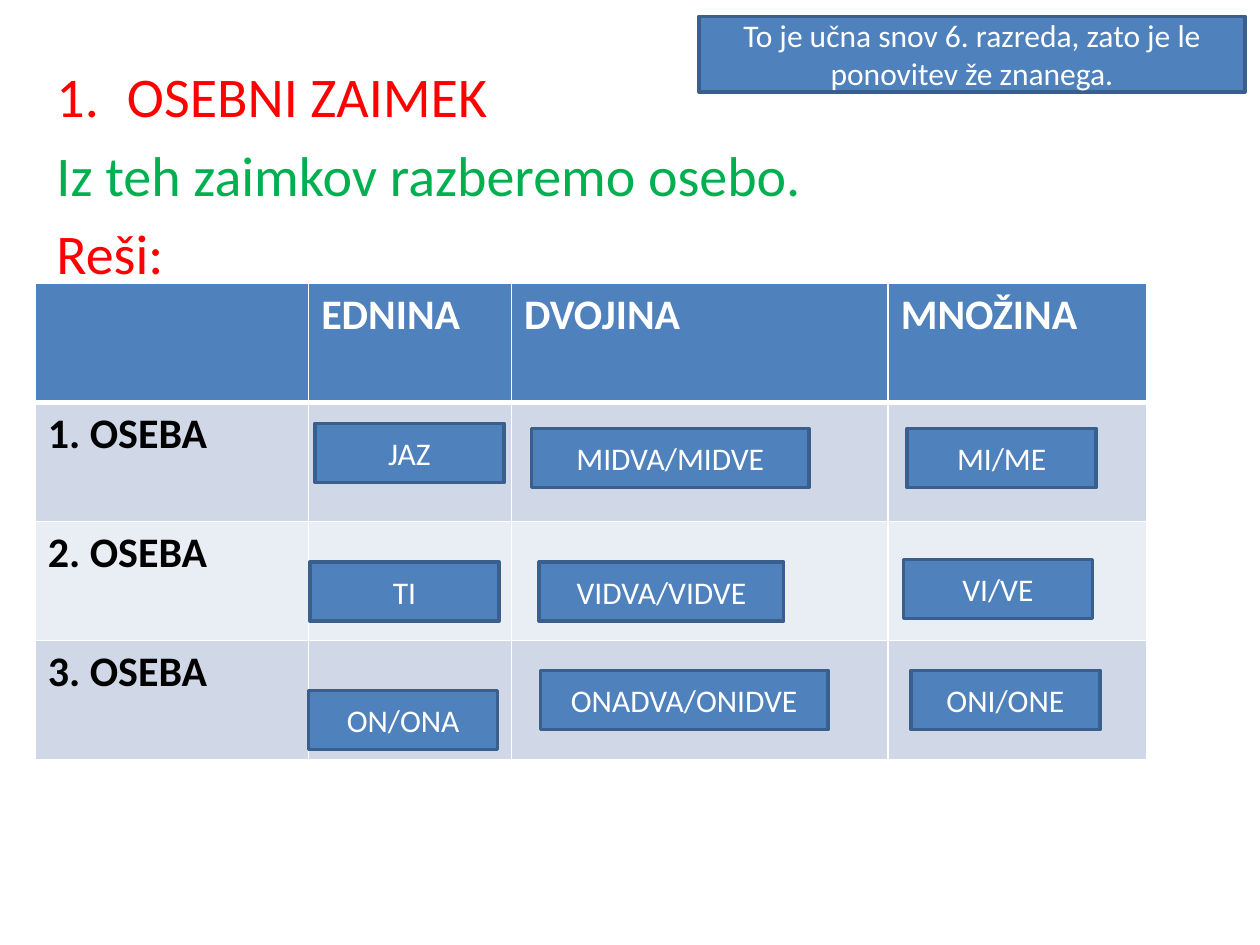
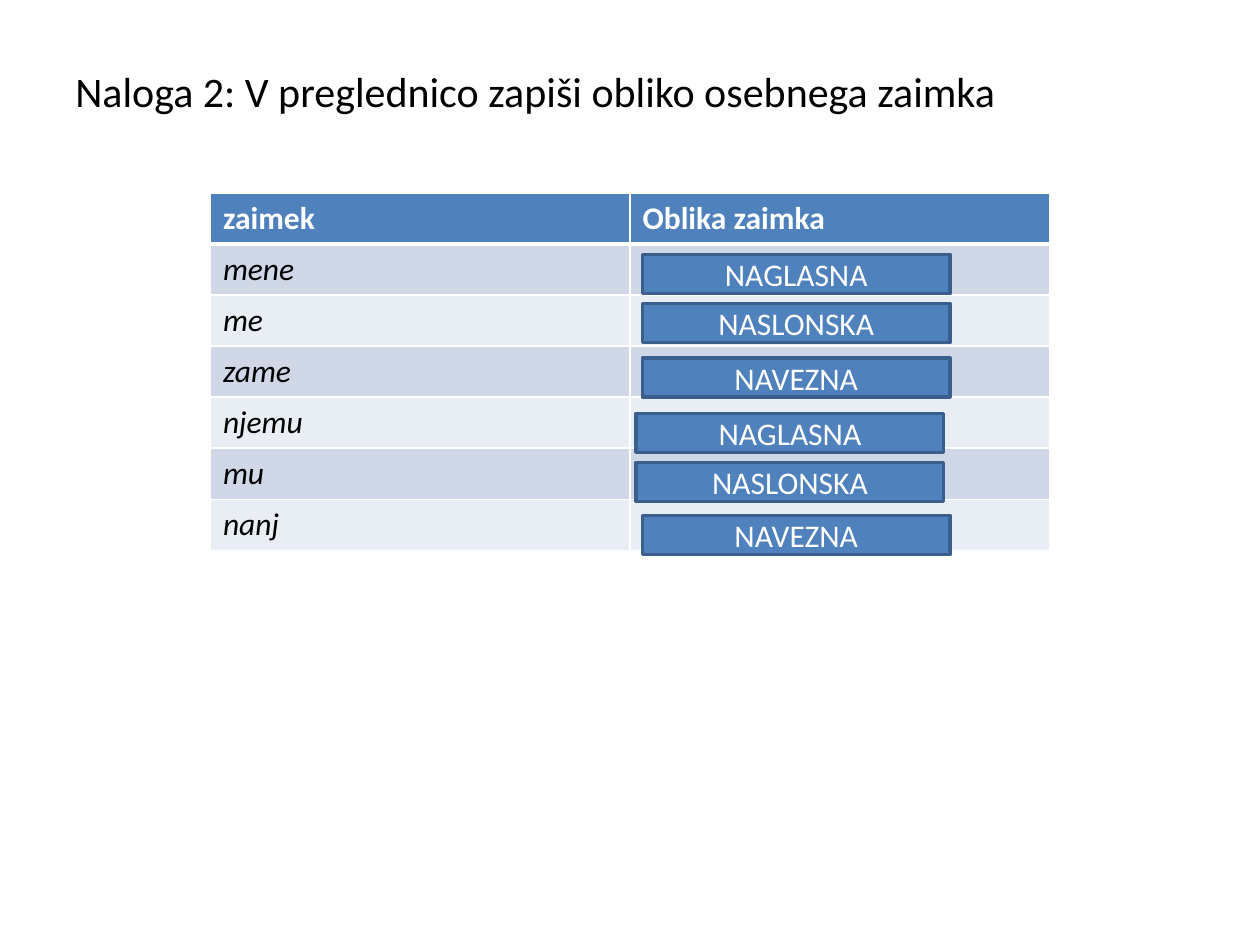
"""Build two slides on personal pronouns with answer boxes over tables."""
from lxml.etree import SubElement
from pptx import Presentation
from pptx.dml.color import RGBColor as RGB
from pptx.enum.shapes import MSO_SHAPE as SHAPE
from pptx.enum.text import MSO_ANCHOR as ANCHOR, PP_ALIGN as ALIGN
from pptx.oxml.ns import qn
from pptx.util import Inches, Pt

COLORS = {
    "blue": "4F81BD", "edge": "3A5F8C", "band1": "D0D8E8", "band2": "E9EDF4",
    "white": "FFFFFF", "black": "000000", "red": "FF0000", "green": "00B050",
}


def rgb(name):
    return RGB.from_string(COLORS[name])


class Deck:
    def __init__(self):
        self.prs = Presentation()
        self.prs.slide_width, self.prs.slide_height = Inches(10), Inches(7.5)
        self.font = "Calibri"
        self.s = None

    def slide(self):
        self.s = self.prs.slides.add_slide(self.prs.slide_layouts[6])

    def run(self, p, text, color, **fmt):
        r = p.add_run()
        r.text = text
        for key, value in {"name": self.font, **fmt}.items():
            setattr(r.font, key, value)
        r.font.color.rgb = rgb(color)

    def body(self, at, size, lines):
        tf = self.s.shapes.add_textbox(*map(Inches, at)).text_frame
        tf.word_wrap = True
        for i, (text, color, hanging, number) in enumerate(lines):
            p = tf.add_paragraph() if i else tf.paragraphs[0]
            pPr = p._p.get_or_add_pPr()
            if hanging:
                pPr.set("marL", str(Inches(hanging)))
                pPr.set("indent", str(-Inches(hanging)))
            before = SubElement(pPr, qn("a:spcBef"))
            SubElement(before, qn("a:spcPct"), val="20000")
            if number:
                SubElement(pPr, qn("a:buFont"), typeface="+mj-lt")
                SubElement(pPr, qn("a:buAutoNum"), type=number)
            self.run(p, text, color, size=Pt(size))

    def borders(self, cell, row):
        tcPr = cell._tc.get_or_add_tcPr()
        widths = {"L": 1, "R": 1, "T": 1, "B": 1 if row else 3}
        if row == 1:
            widths["T"] = 3
        for side, width in widths.items():
            ln = SubElement(tcPr, qn(f"a:ln{side}"), w=str(Pt(width)))
            fill = SubElement(ln, qn("a:solidFill"))
            SubElement(fill, qn("a:srgbClr"), val=COLORS["white"])

    def table(self, at, size, header, labels, widths, **label_fmt):
        rows = [header] + [[label] + [""] * (len(header) - 1) for label in labels]
        frame = self.s.shapes.add_table(len(rows), len(header), *map(Inches, at))
        table = frame.table
        table.first_row = table.horz_banding = False
        for col, width in zip(table.columns, widths):
            col.width = Inches(width)
        for i, row in enumerate(rows):
            fill = ("band1" if i % 2 else "band2") if i else "blue"
            fmt = label_fmt if i else {"bold": True}
            for j, text in enumerate(row):
                cell = table.cell(i, j)
                self.borders(cell, i)
                cell.fill.solid()
                cell.fill.fore_color.rgb = rgb(fill)
                if text:
                    self.run(cell.text_frame.paragraphs[0], text,
                             "black" if i else "white", size=Pt(size), **fmt)

    def box(self, at, text):
        sp = self.s.shapes.add_shape(SHAPE.RECTANGLE, *map(Inches, at))
        sp.shadow.inherit = False
        sp.fill.solid()
        sp.fill.fore_color.rgb = rgb("blue")
        sp.line.color.rgb = rgb("edge")
        sp.line.width = Pt(2)
        tf = sp.text_frame
        tf.word_wrap = True
        tf.vertical_anchor = ANCHOR.MIDDLE
        p = tf.paragraphs[0]
        p.alignment = ALIGN.CENTER
        self.run(p, text, "white", size=Pt(18))


def persons(deck):
    deck.slide()
    deck.body((0.35, 0.44, 9, 4.95), 32, [
        ("OSEBNI ZAIMEK", "red", 0.56, "arabicPeriod"),
        ("Iz teh zaimkov razberemo osebo.", "green", 0, None),
        ("Reši:", "red", 0.56, None),
    ])
    deck.table((0.28, 2.25, 8.82, 3.78), 24, ["", "EDNINA", "DVOJINA", "MNOŽINA"],
               [f"{n}. OSEBA" for n in (1, 2, 3)], (2.17, 1.61, 2.99, 2.05), bold=True)
    for x, y, w, text in (
        (2.5, 3.36, 1.5, "JAZ"),
        (2.46, 4.46, 1.5, "TI"),
        (2.45, 5.48, 1.5, "ON/ONA"),
        (4.22, 3.4, 2.2, "MIDVA/MIDVE"),
        (4.28, 4.46, 1.94, "VIDVA/VIDVE"),
        (4.29, 5.32, 2.28, "ONADVA/ONIDVE"),
        (7.2, 3.4, 1.5, "MI/ME"),
        (7.17, 4.44, 1.5, "VI/VE"),
        (7.23, 5.32, 1.5, "ONI/ONE"),
    ):
        deck.box((x, y, w, 0.47), text)
    deck.box((5.55, 0.13, 4.33, 0.6),
             "To je učna snov 6. razreda, zato je le ponovitev že znanega.")


def forms(deck):
    deck.slide()
    deck.body((0.5, 0.47, 9, 6.26), 24, [
        ("Naloga 2: V preglednico zapiši obliko osebnega zaimka", "black", 0, None),
    ])
    deck.table((1.67, 1.53, 6.67, 2.84), 18, ["zaimek", "Oblika zaimka"],
               ["mene", "me", "zame", "njemu", "mu", "nanj"], (3.33, 3.33),
               bold=False, italic=True)
    answers = ["NAGLASNA", "NASLONSKA", "NAVEZNA"] * 2
    places = ((5.1, 2.02), (5.1, 2.41), (5.1, 2.84), (5.05, 3.28), (5.05, 3.67), (5.1, 4.09))
    for (x, y), text in zip(places, answers):
        deck.box((x, y, 2.44, 0.31), text)


def main():
    deck = Deck()
    persons(deck)
    forms(deck)
    deck.prs.save("out.pptx")


if __name__ == "__main__":
    main()
